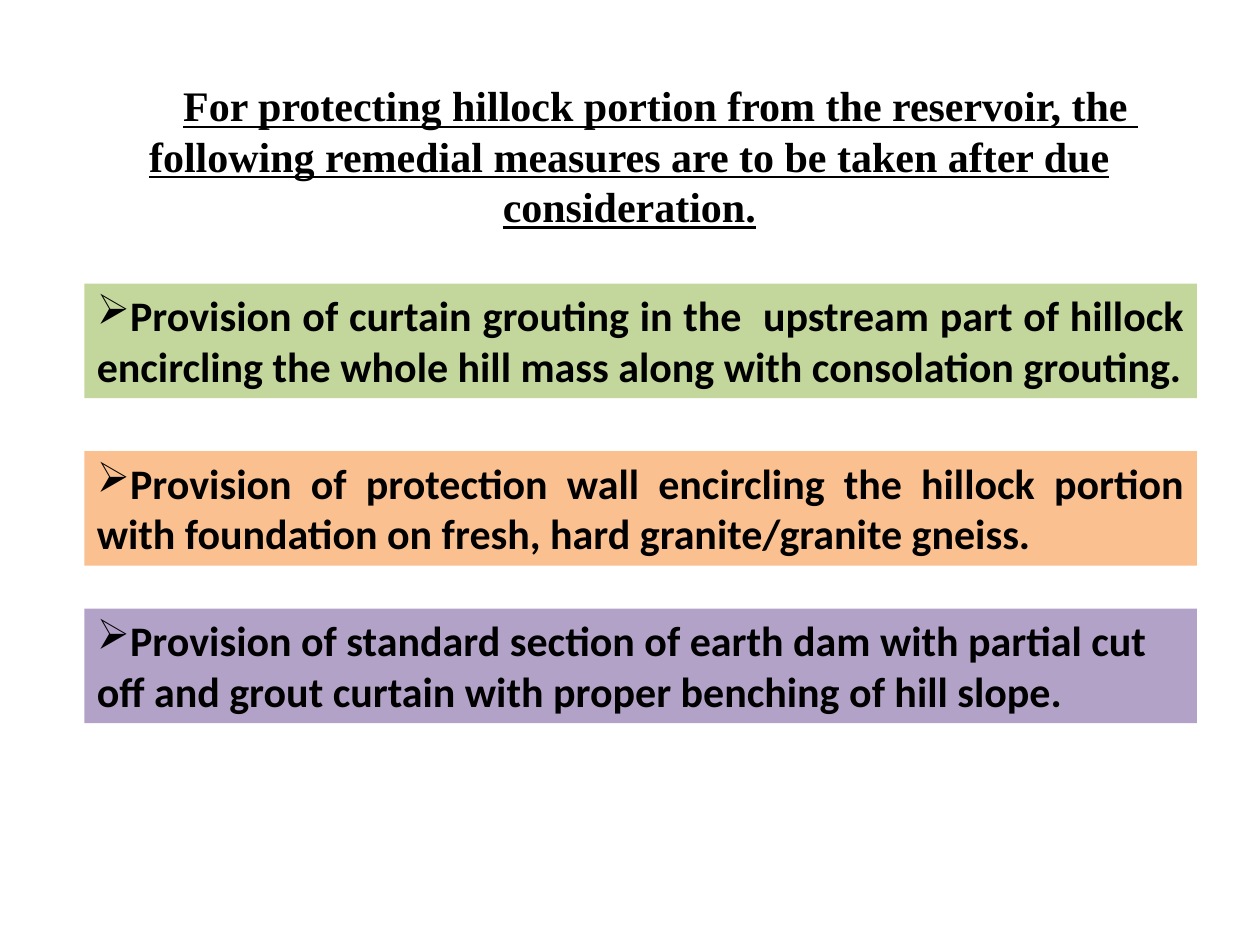
from dataclasses import dataclass
from lxml import etree
from pptx import Presentation
from pptx.dml.color import RGBColor
from pptx.enum.shapes import MSO_SHAPE
from pptx.enum.text import MSO_ANCHOR, MSO_AUTO_SIZE, PP_ALIGN
from pptx.oxml.ns import qn
from pptx.util import Inches, Pt

RECTANGLE = MSO_SHAPE.RECTANGLE
TOP, MIDDLE = MSO_ANCHOR.TOP, MSO_ANCHOR.MIDDLE
LEFT, CENTER, JUSTIFY = PP_ALIGN.LEFT, PP_ALIGN.CENTER, PP_ALIGN.JUSTIFY
NO_AUTOFIT = MSO_AUTO_SIZE.NONE
TITLE_ONLY = 5


@dataclass(frozen=True)
class Theme:
    title_font: str = "Times New Roman"
    measure_font: str = "Calibri"
    size: int = 24
    ink: str = "000000"
    green: str = "C3D69B"
    orange: str = "FAC090"
    purple: str = "B3A2C7"


THEME = Theme()

HEADING = (
    "For protecting hillock portion from the reservoir, the  following "
    "remedial measures are to be taken after due consideration."
)
MEASURES = [
    ("Provision of curtain grouting in the  upstream part of hillock encircling "
     "the whole hill mass along with consolation grouting.",
     2.25, THEME.green, JUSTIFY),
    ("Provision of protection wall encircling the hillock portion with foundation "
     "on fresh, hard granite/granite gneiss.",
     3.58, THEME.orange, JUSTIFY),
    ("Provision of standard section of earth dam with partial cut off and grout "
     "curtain with proper benching of hill slope.",
     4.83, THEME.purple, LEFT),
]
BAND_LEFT, BAND_WIDTH, BAND_HEIGHT = 0.67, 8.83, 0.91


def write(holder, text, font, align, anchor, underline=False):
    frame = holder.text_frame
    frame.word_wrap = True
    frame.auto_size = NO_AUTOFIT
    frame.vertical_anchor = anchor
    paragraph = frame.paragraphs[0]
    paragraph.alignment = align
    run = paragraph.add_run()
    run.text = text
    run.font.name = font
    run.font.size = Pt(THEME.size)
    run.font.bold = True
    run.font.underline = underline
    run.font.color.rgb = RGBColor.from_string(THEME.ink)
    return paragraph


def add_heading(slide):
    title = slide.shapes.title
    title.left, title.top = Inches(0.58), Inches(0.58)
    title.width, title.height = Inches(8.83), Inches(1.31)
    paragraph = write(title, HEADING, THEME.title_font, CENTER, MIDDLE, True)
    properties = paragraph._p.get_or_add_pPr()
    properties.set("marL", "0")
    properties.set("indent", str(Inches(0.5)))


def add_measure(slide, text, top, fill, align):
    band = slide.shapes.add_shape(
        RECTANGLE, Inches(BAND_LEFT), Inches(top), Inches(BAND_WIDTH), Inches(BAND_HEIGHT))
    band.shadow.inherit = False
    band.fill.solid()
    band.fill.fore_color.rgb = RGBColor.from_string(fill)
    band.line.fill.background()
    paragraph = write(band, text, THEME.measure_font, align, TOP)
    bullet = etree.SubElement(paragraph._p.get_or_add_pPr(), qn("a:buChar"))
    bullet.set("char", "➢")


def main():
    deck = Presentation()
    deck.slide_width, deck.slide_height = Inches(10), Inches(7.5)
    slide = deck.slides.add_slide(deck.slide_layouts[TITLE_ONLY])
    add_heading(slide)
    for measure in MEASURES:
        add_measure(slide, *measure)
    deck.save("out.pptx")


if __name__ == "__main__":
    main()
